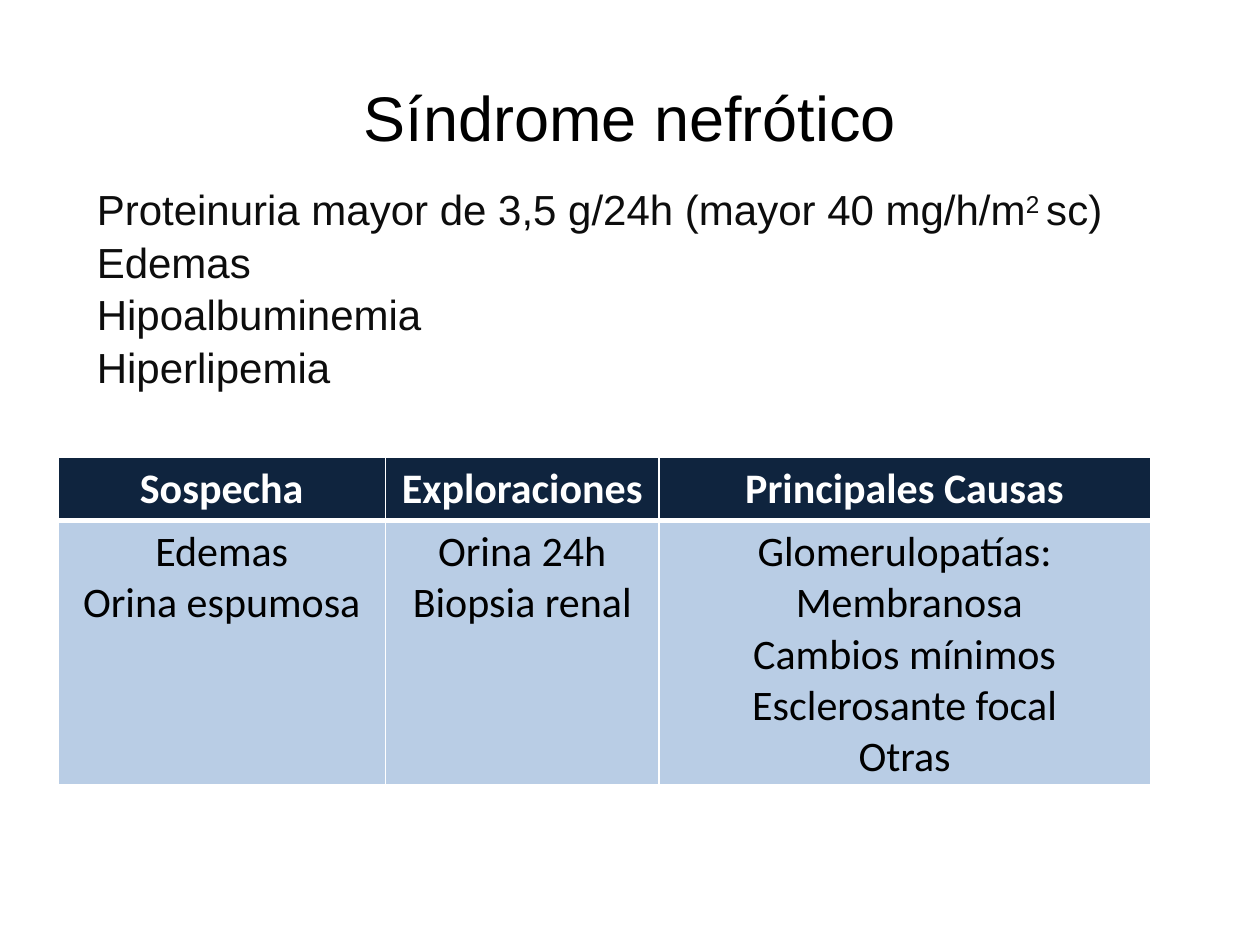
import lxml.etree
import pptx
import pptx.dml.color
import pptx.enum.text
import pptx.oxml.ns
import pptx.util

Inches = pptx.util.Inches
Pt = pptx.util.Pt
ALIGN = pptx.enum.text.PP_ALIGN
ANCHOR = pptx.enum.text.MSO_ANCHOR

TITLE = {"name": "Arial", "size": Pt(36), "color": "000000"}
BODY = {"name": "Arial", "size": Pt(24), "color": "0D0D0D"}
HEADER = {"name": "Calibri", "size": Pt(24), "bold": True, "color": "FFFFFF"}
CELL = {"name": "Calibri", "size": Pt(24), "bold": False, "color": "000000"}

FINDINGS = [
    ["Proteinuria mayor de 3,5 g/24h (mayor 40 mg/h/m", ("2 ", 30), "sc)"],
    "Edemas",
    "Hipoalbuminemia",
    "Hiperlipemia",
]
COLUMNS = {
    "Sospecha": ["Edemas", "Orina espumosa"],
    "Exploraciones": ["Orina 24h", "Biopsia renal"],
    "Principales Causas": [
        "Glomerulopatías:", " Membranosa", "Cambios mínimos",
        "Esclerosante focal", "Otras",
    ],
}


def rgb(value):
    return pptx.dml.color.RGBColor.from_string(value)


class SlideBuilder:
    border_color = "FFFFFF"
    header_fill = "0F243E"
    cell_fill = "B9CDE5"

    def __init__(self, slide):
        self.slide = slide

    def fill_text(self, frame, lines, style, alignment, space_after=0):
        """Fill a text frame; a (text, baseline) pair is a raised run."""
        for index, line in enumerate(lines):
            paragraph = frame.paragraphs[0] if index == 0 else frame.add_paragraph()
            paragraph.alignment = alignment
            paragraph.space_after = Pt(space_after)
            for part in [line] if isinstance(line, str) else line:
                text, baseline = (part, 0) if isinstance(part, str) else part
                run = paragraph.add_run()
                run.text = text
                for name, value in style.items():
                    if name == "color":
                        run.font.color.rgb = rgb(value)
                    else:
                        setattr(run.font, name, value)
                if baseline:
                    run.font._element.set("baseline", str(baseline * 1000))

    def text(self, box, lines, style, alignment, anchor=ANCHOR.TOP, space_after=0):
        shape = self.slide.shapes.add_textbox(*map(Inches, box))
        shape.text_frame.word_wrap = True
        shape.text_frame.vertical_anchor = anchor
        self.fill_text(shape.text_frame, lines, style, alignment, space_after)

    def border(self, cell, widths):
        """Draw cell borders, given points for each side L, R, T, B."""
        properties = cell._tc.get_or_add_tcPr()
        for side, width in widths.items():
            line = lxml.etree.SubElement(
                properties, pptx.oxml.ns.qn(f"a:ln{side}"), w=str(Pt(width)))
            fill = lxml.etree.SubElement(line, pptx.oxml.ns.qn("a:solidFill"))
            lxml.etree.SubElement(
                fill, pptx.oxml.ns.qn("a:srgbClr"), val=self.border_color)

    def table(self, box, columns, widths, heights):
        """Add a table from a dict of header to body lines."""
        table = self.slide.shapes.add_table(
            len(heights), len(widths), *map(Inches, box)).table
        for row, height in zip(table.rows, heights):
            row.height = Inches(height)
        for index, (header, lines) in enumerate(columns.items()):
            table.columns[index].width = Inches(widths[index])
            rows = [([header], HEADER, self.header_fill, {"T": 1, "B": 3}),
                    (lines, CELL, self.cell_fill, {"T": 3, "B": 1})]
            for row, (content, style, fill, edges) in enumerate(rows):
                cell = table.cell(row, index)
                self.border(cell, {"L": 1, "R": 1, **edges})
                cell.fill.solid()
                cell.fill.fore_color.rgb = rgb(fill)
                self.fill_text(cell.text_frame, content, style, ALIGN.CENTER)


def main():
    presentation = pptx.Presentation()
    presentation.slide_width = Inches(10)
    presentation.slide_height = Inches(7.5)
    builder = SlideBuilder(
        presentation.slides.add_slide(presentation.slide_layouts[6]))
    builder.text((0.5, 0.3, 9, 1.25), ["Síndrome nefrótico"], TITLE,
                 ALIGN.CENTER, ANCHOR.MIDDLE)
    builder.text((0.67, 1.41, 8.47, 1.63), FINDINGS, BODY, ALIGN.JUSTIFY,
                 space_after=1.2)
    builder.table((0.46, 3.63, 8.67, 2.6), COLUMNS, [2.6, 2.17, 3.9], [0.5, 2.1])
    presentation.save("out.pptx")


if __name__ == "__main__":
    main()
